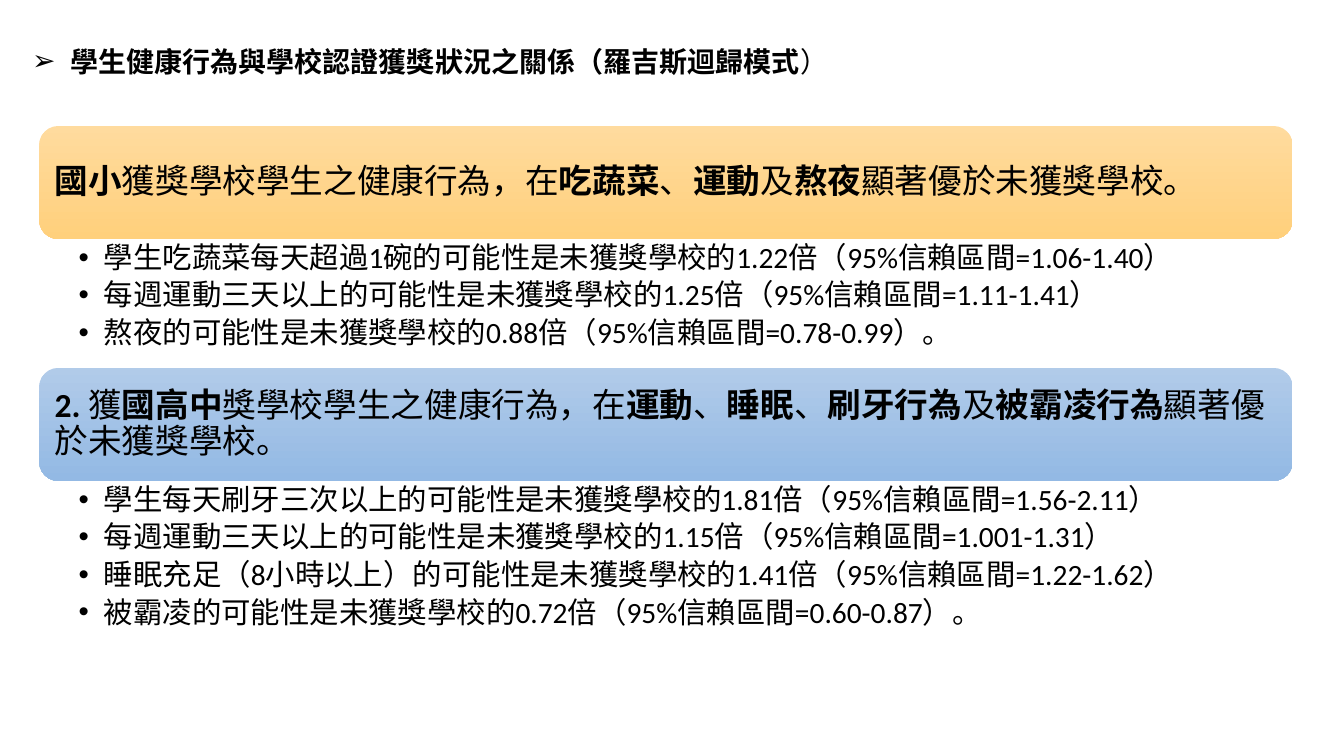
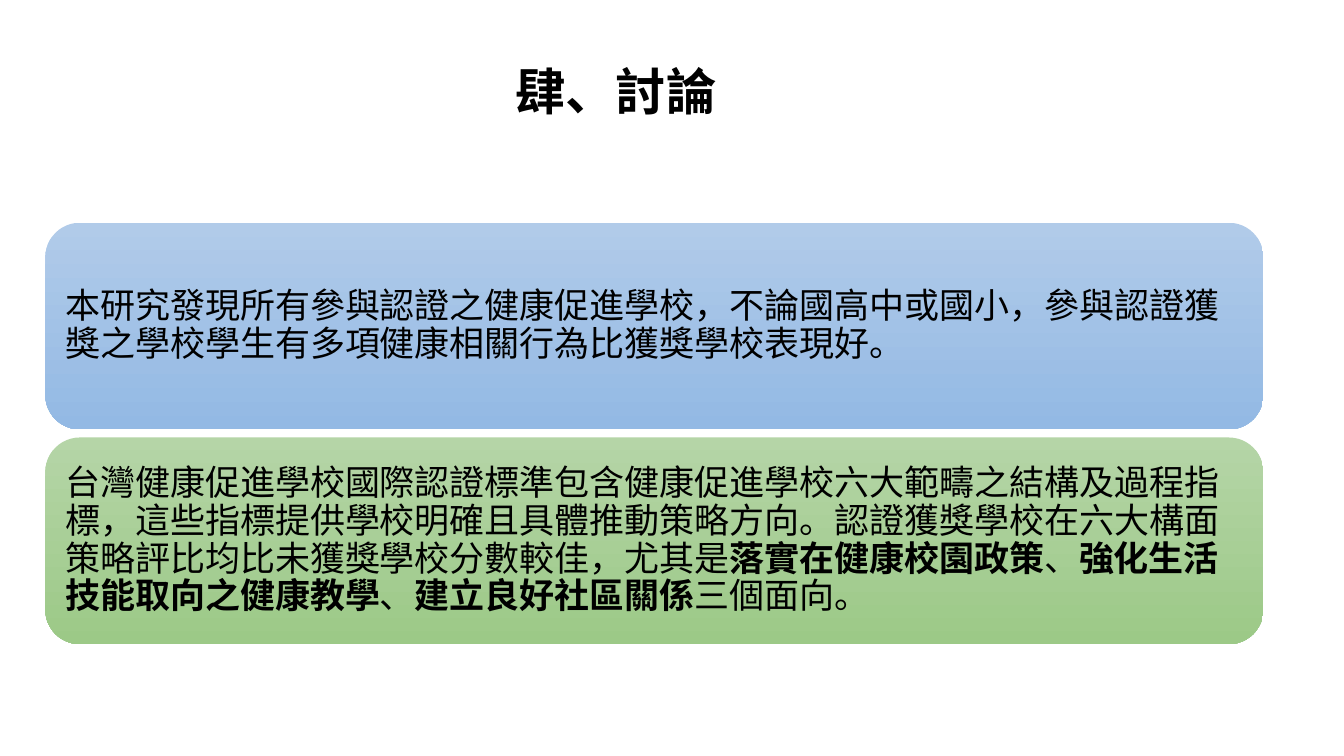
from dataclasses import dataclass

from lxml import etree
from pptx import Presentation
from pptx.dml.color import RGBColor
from pptx.enum.shapes import MSO_SHAPE
from pptx.enum.text import MSO_ANCHOR, PP_ALIGN
from pptx.oxml.ns import qn
from pptx.util import Inches, Pt

ROUND = MSO_SHAPE.ROUNDED_RECTANGLE
TOP, MIDDLE = MSO_ANCHOR.TOP, MSO_ANCHOR.MIDDLE
LEFT, CENTER = PP_ALIGN.LEFT, PP_ALIGN.CENTER


@dataclass(frozen=True)
class Theme:
    ink: str = "000000"
    gold: tuple = ("FFDB9E", "FFD07C")
    blue: tuple = ("B1CBE9", "93B9E4")
    green: tuple = ("B5D5A7", "9CC987")
    font: str = "Calibri"
    head_font: str = "Noto Sans CJK SC"
    topic: int = 20
    item: int = 21
    lead: int = 24
    body: int = 25
    head: int = 36
    tight: float = 0.9
    gap: float = 4.2


class Deck:
    def __init__(self, theme):
        self.theme = theme
        self.file = Presentation()
        self.file.slide_width = Inches(13.33)
        self.file.slide_height = Inches(7.5)
        self.slide = None

    def start(self):
        self.slide = self.file.slides.add_slide(self.file.slide_layouts[6])

    def frame(self, shape, pads, anchor=TOP):
        frame = shape.text_frame
        frame.word_wrap = True
        frame.vertical_anchor = anchor
        (frame.margin_left, frame.margin_top,
         frame.margin_right, frame.margin_bottom) = map(Inches, pads)
        return frame

    def box(self, area, pads=(0.1, 0.05, 0.1, 0.05)):
        shape = self.slide.shapes.add_textbox(*map(Inches, area))
        return self.frame(shape, pads)

    def add_runs(self, para, text, size, font=None, align=LEFT, line=None):
        """Fill a paragraph; text between asterisks is bold."""
        para.alignment = align
        if line:
            para.line_spacing = line
        for i, part in enumerate(text.split("*")):
            if part:
                run = para.add_run()
                run.text = part
                run.font.size = Pt(size)
                run.font.name = font or self.theme.font
                run.font.bold = i % 2 == 1
                run.font.color.rgb = RGBColor.from_string(self.theme.ink)

    def bullet(self, para, mark, indent):
        props = para._p.get_or_add_pPr()
        props.set("marL", str(Inches(indent)))
        props.set("indent", str(-Inches(indent)))
        etree.SubElement(props, qn("a:buFont")).set("typeface", "Arial")
        etree.SubElement(props, qn("a:buChar")).set("char", mark)

    def topic(self, text, area):
        para = self.box(area).paragraphs[0]
        self.bullet(para, "➢", 0.38)
        self.add_runs(para, text, self.theme.topic)

    def head(self, text, area):
        para = self.box(area).paragraphs[0]
        self.add_runs(para, text, self.theme.head, self.theme.head_font,
                      CENTER, self.theme.tight)

    def card(self, text, area, tones, size):
        shape = self.slide.shapes.add_shape(ROUND, *map(Inches, area))
        shape.shadow.inherit = False
        shape.line.fill.background()
        shape.fill.gradient()
        shape.fill.gradient_angle = 270
        for stop, tone in zip(shape.fill.gradient_stops, tones):
            stop.color.rgb = RGBColor.from_string(tone)
        frame = self.frame(shape, (0.1,) * 4, MIDDLE)
        self.add_runs(frame.paragraphs[0], text, size, line=self.theme.tight)

    def items(self, lines, area):
        frame = self.box(area, (0.39, 0.04, 0.21, 0.04))
        for i, text in enumerate(lines):
            para = frame.add_paragraph() if i else frame.paragraphs[0]
            para.space_after = Pt(self.theme.gap)
            self.bullet(para, "•", 0.25)
            self.add_runs(para, text, self.theme.item, line=self.theme.tight)


def results(deck):
    theme = deck.theme
    deck.start()
    deck.topic("*學生健康行為與學校認證獲獎狀況之關係（羅吉斯迴歸模式*）",
               (0.22, 0.39, 8.76, 0.44))
    groups = [
        ("*國小*獲獎學校學生之健康行為，在*吃蔬菜*、*運動*及*熬夜*顯著優於未獲獎學校。",
         theme.gold, 1.28,
         ["學生吃蔬菜每天超過1碗的可能性是未獲獎學校的1.22倍（95%信賴區間=1.06-1.40）",
          "每週運動三天以上的可能性是未獲獎學校的1.25倍（95%信賴區間=1.11-1.41）",
          "熬夜的可能性是未獲獎學校的0.88倍（95%信賴區間=0.78-0.99）。"]),
        ("*2. *獲*國高中*獎學校學生之健康行為，在*運動*、*睡眠*、*刷牙行為*及"
         "*被霸凌行為*顯著優於未獲獎學校。",
         theme.blue, 1.68,
         ["學生每天刷牙三次以上的可能性是未獲獎學校的1.81倍（95%信賴區間=1.56-2.11）",
          "每週運動三天以上的可能性是未獲獎學校的1.15倍（95%信賴區間=1.001-1.31）",
          "睡眠充足（8小時以上）的可能性是未獲獎學校的1.41倍（95%信賴區間=1.22-1.62）",
          "被霸凌的可能性是未獲獎學校的0.72倍（95%信賴區間=0.60-0.87）。"]),
    ]
    left, top, width, tall = 0.39, 1.25, 12.43, 1.12
    for lead, tones, depth, lines in groups:
        deck.card(lead, (left, top, width, tall), tones, theme.lead)
        deck.items(lines, (left, top + tall, width, depth))
        top += tall + depth


def debate(deck):
    theme = deck.theme
    deck.start()
    deck.head("*肆、討論*", (0.36, 0.62, 11.5, 0.89))
    cards = [
        ("本研究發現所有參與認證之健康促進學校，不論國高中或國小，"
         "參與認證獲獎之學校學生有多項健康相關行為比獲獎學校表現好。", theme.blue),
        ("台灣健康促進學校國際認證標準包含健康促進學校六大範疇之結構及過程指標，"
         "這些指標提供學校明確且具體推動策略方向。"
         "認證獲獎學校在六大構面策略評比均比未獲獎學校分數較佳，"
         "尤其是*落實在健康校園政策*、*強化生活技能取向之健康教學*、"
         "*建立良好社區關係*三個面向。", theme.green),
    ]
    tall, gap = 2.05, 0.08
    for i, (text, tones) in enumerate(cards):
        area = (0.45, 2.21 + i * (tall + gap), 12.08, tall)
        deck.card(text, area, tones, theme.body)


def main():
    deck = Deck(Theme())
    results(deck)
    debate(deck)
    deck.file.save("out.pptx")


if __name__ == "__main__":
    main()
